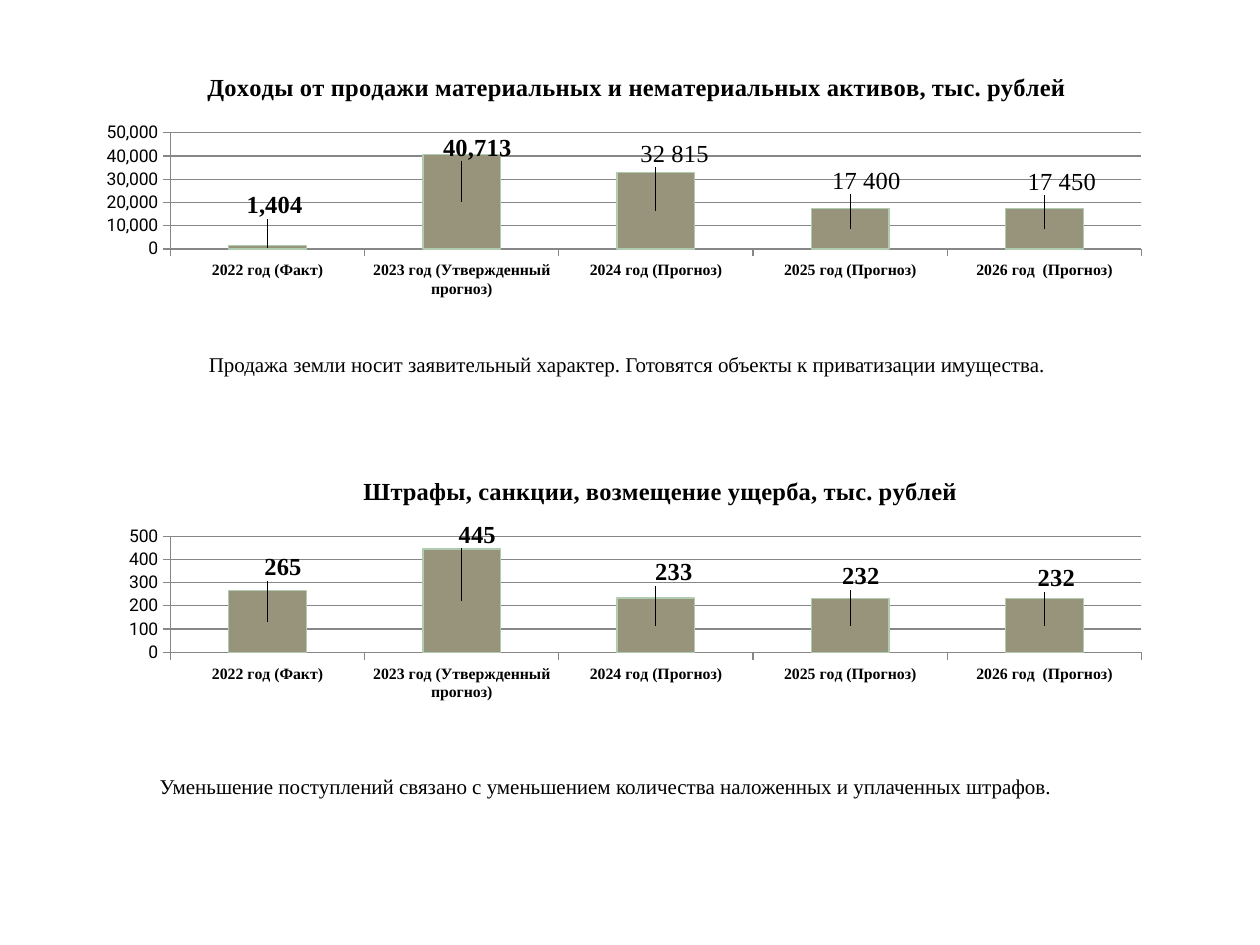
from pptx import Presentation
from pptx.chart.data import CategoryChartData as Data
from pptx.dml.color import RGBColor
from pptx.enum.chart import XL_CHART_TYPE as Kind, XL_TICK_MARK as Tick
from pptx.oxml import parse_xml
from pptx.oxml.ns import nsdecls, qn
from pptx.util import Cm, Pt

BLACK = RGBColor(0x00, 0x00, 0x00)
GRAY = RGBColor(0x87, 0x87, 0x87)
KHAKI = RGBColor(0x98, 0x94, 0x7C)
MINT = RGBColor(0xB0, 0xCC, 0xB0)
SERIF = "Times New Roman"


def style(font, size, bold=False, name=SERIF):
    font.size, font.bold, font.name = Pt(size), bold, name
    font.color.rgb = BLACK


def place(node, spot, tags, head=""):
    for old in node.findall(qn("c:layout")):
        node.remove(old)
    body = "".join(f'<c:{tag} val="{val}"/>' for tag, val in tags.items())
    node.insert(spot, parse_xml(
        f'<c:layout {nsdecls("c")}><c:manualLayout>{head}{body}'
        "</c:manualLayout></c:layout>"))


EDGE = '<c:xMode val="edge"/><c:yMode val="edge"/>'
INNER = '<c:layoutTarget val="inner"/>' + EDGE
YEARS = ["2022 год (Факт)", "2023 год (Утвержденный прогноз)",
         "2024 год (Прогноз)", "2025 год (Прогноз)", "2026 год  (Прогноз)"]
CHARTS = [
    (1.19, "Доходы от продажи материальных и нематериальных активов, тыс. рублей",
     0.145, 10000, [1404, 40713, 32815, 17400, 17450],
     {2: " 32 815", 3: " 17 400", 4: " 17 450"},
     [(7, -42), (16, -54), (16, -57), (13, -48), (14, -47)]),
    (9.32, "Штрафы, санкции, возмещение ущерба, тыс. рублей",
     0.275, 100, [265, 445, 233, 232, 232], {},
     [(16, -54), (16, -66), (18, -53), (11, -49), (12, -47)]),
]
NOTES = [
    (3.96, 6.96, 17.65,
     "Продажа земли носит заявительный характер. Готовятся объекты к приватизации имущества."),
    (2.97, 15.47, 18.59,
     "Уменьшение поступлений связано с уменьшением количества наложенных и уплаченных штрафов."),
]

deck = Presentation()
deck.slide_width, deck.slide_height = Cm(25.4), Cm(19.05)
slide = deck.slides.add_slide(deck.slide_layouts[6])

for top, title, left, step, vals, texts, shifts in CHARTS:
    data = Data(number_format="#,##0")
    data.categories = YEARS
    data.add_series("Series 1", vals)
    chart = slide.shapes.add_chart(
        Kind.COLUMN_STACKED, Cm(0.58), Cm(top), Cm(24.2), Cm(5.56), data).chart
    style(chart.font, 18, name="Roboto")
    chart.has_legend = False
    chart.has_title = True
    frame = chart.chart_title.text_frame
    frame.text = title
    style(frame.paragraphs[0].runs[0].font, 14, True)
    place(chart.chart_title._element, 1, {"x": left, "y": 0.03}, EDGE)
    place(chart._chartSpace.chart.plotArea, 0,
          {"x": 0.118, "y": 0.268, "w": 0.809, "h": 0.421}, INNER)

    cat, val = chart.category_axis, chart.value_axis
    style(cat.tick_labels.font, 9, True)
    style(val.tick_labels.font, 10, name="Roboto")
    val.minimum_scale, val.maximum_scale, val.major_unit = 0, 5 * step, step
    val.tick_labels.number_format = "#,##0"
    val.tick_labels.number_format_is_linked = False
    val.has_major_gridlines = True
    for axis in (cat, val):
        axis.major_tick_mark = Tick.OUTSIDE
        axis.format.line.color.rgb = GRAY
    val.major_gridlines.format.line.color.rgb = GRAY

    plot = chart.plots[0]
    plot.vary_by_categories = False
    plot.gap_width, plot.overlap = 150, 100
    bars = plot.series[0]
    bars.format.fill.solid()
    bars.format.fill.fore_color.rgb = KHAKI
    bars.format.line.color.rgb = MINT
    bars.format.line.width = Pt(0.79)
    tags = bars.data_labels
    tags.show_value = True
    tags.number_format, tags.number_format_is_linked = "#,##0", False
    style(tags.font, 14, True)
    for i in range(len(vals)):
        label = bars.points[i].data_label
        if i in texts:
            label.text_frame.text = texts[i]
            style(label.text_frame.paragraphs[0].runs[0].font, 14)
        else:
            style(label.font, 14, True)
    for node, (dx, dy) in zip(bars._element.iter(qn("c:dLbl")), shifts):
        place(node, 1, {"x": round(dx / 1200, 3), "y": round(dy / 276, 3)})

for left, top, width, text in NOTES:
    frame = slide.shapes.add_textbox(Cm(left), Cm(top), Cm(width), Cm(0.76)).text_frame
    frame.word_wrap = False
    frame.text = text
    style(frame.paragraphs[0].runs[0].font, 12)

deck.save("out.pptx")
